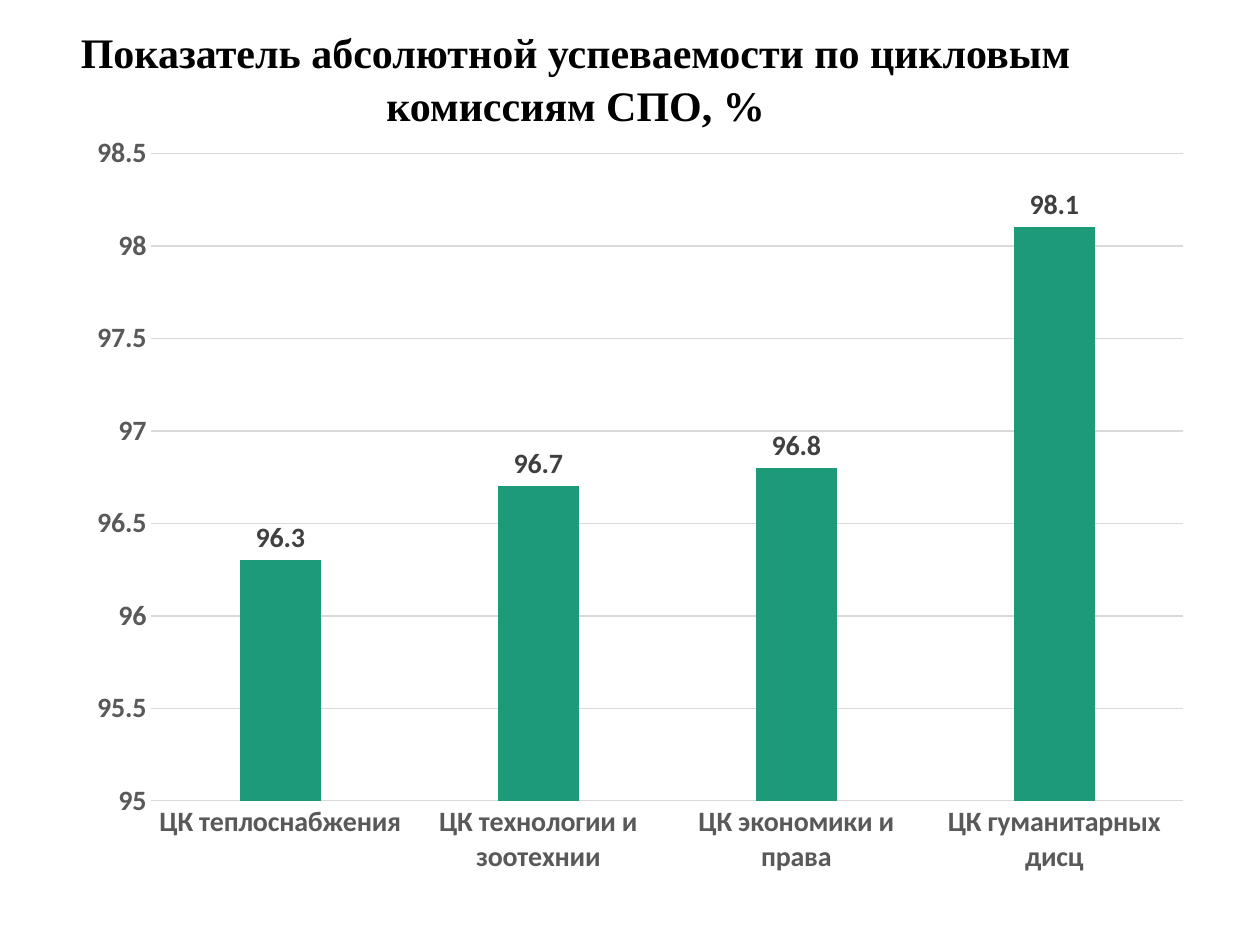
import pptx
import pptx.chart.data
import pptx.dml.color
import pptx.enum.chart
import pptx.enum.text
import pptx.util
from pptx.util import Cm


def color(value):
    return pptx.dml.color.RGBColor.from_string(value)


def style_font(font, name, size, value):
    font.name = name
    font.size = pptx.util.Pt(size)
    font.bold = True
    font.color.rgb = color(value)


presentation = pptx.Presentation()
presentation.slide_width = Cm(25.4)
presentation.slide_height = Cm(19.05)
slide = presentation.slides.add_slide(presentation.slide_layouts[6])

# Title
title = slide.shapes.add_textbox(Cm(0.71), Cm(0.33), Cm(21.79), Cm(2.03))
title.text_frame.word_wrap = True
paragraph = title.text_frame.paragraphs[0]
paragraph.alignment = pptx.enum.text.PP_ALIGN.CENTER
paragraph.line_spacing = 1.07
run = paragraph.add_run()
run.text = "Показатель абсолютной успеваемости по цикловым комиссиям СПО, %"
style_font(run.font, "Times New Roman", 24, "000000")

# Column chart of pass rates
chart_data = pptx.chart.data.CategoryChartData()
chart_data.categories = [
    "ЦК теплоснабжения",
    "ЦК технологии и зоотехнии",
    "ЦК экономики и права",
    "ЦК гуманитарных дисц",
]
chart_data.add_series("Series 1", [96.3, 96.7, 96.8, 98.1])
chart = slide.shapes.add_chart(
    pptx.enum.chart.XL_CHART_TYPE.COLUMN_CLUSTERED,
    Cm(1.5), Cm(2.44), Cm(22.81), Cm(15.49), chart_data,
).chart
chart.has_legend = False
chart.has_title = False
style_font(chart.font, "Calibri", 16, "000000")

# Columns and their labels
plot = chart.plots[0]
plot.gap_width = 219
plot.overlap = -27
plot.vary_by_categories = False
series = plot.series[0]
series.format.fill.solid()
series.format.fill.fore_color.rgb = color("1D9A78")
labels = series.data_labels
labels.show_value = True
labels.position = pptx.enum.chart.XL_LABEL_POSITION.OUTSIDE_END
style_font(labels.font, "Calibri", 16, "404040")

# Axes and gridlines
category_axis, value_axis = chart.category_axis, chart.value_axis
for axis in (category_axis, value_axis):
    axis.major_tick_mark = pptx.enum.chart.XL_TICK_MARK.NONE
    axis.minor_tick_mark = pptx.enum.chart.XL_TICK_MARK.NONE
    style_font(axis.tick_labels.font, "Calibri", 16, "595959")
value_axis.minimum_scale = 95
value_axis.maximum_scale = 98.5
value_axis.major_unit = 0.5
value_axis.has_major_gridlines = True
value_axis.format.line.fill.background()
for line in (category_axis.format.line, value_axis.major_gridlines.format.line):
    line.color.rgb = color("D9D9D9")
    line.width = pptx.util.Pt(0.75)

presentation.save("out.pptx")
